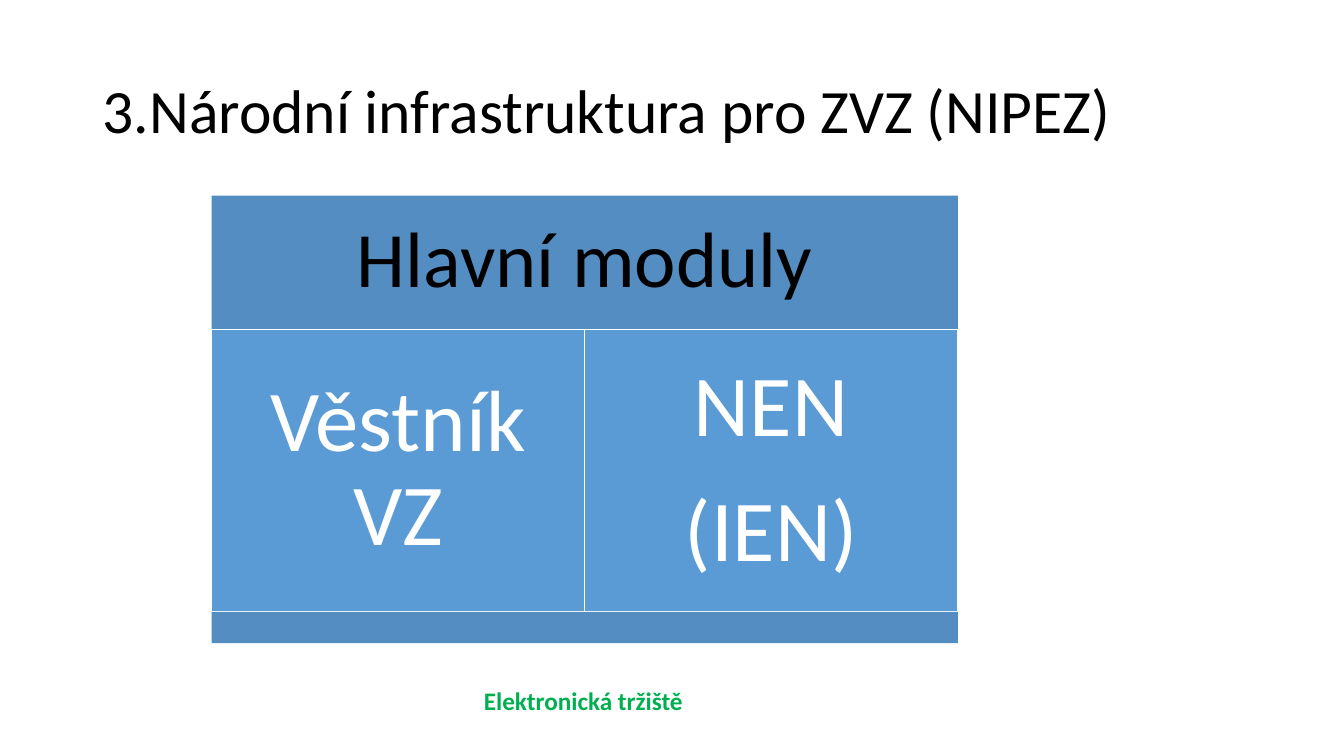
from pptx import Presentation
from pptx.dml.color import RGBColor
from pptx.enum.shapes import MSO_SHAPE
from pptx.enum.text import MSO_ANCHOR, MSO_AUTO_SIZE, PP_ALIGN
from pptx.util import Inches, Pt

COLORS = {
    "band": "538DC1",
    "module": "5B9BD5",
    "white": "FFFFFF",
    "black": "000000",
    "green": "00B050",
}
FONT = "Calibri"
LEFT, WIDTH = 2.1, 7.4
HEADER_TOP, HEADER_HEIGHT = 1.94, 1.33
MODULE_HEIGHT, FOOTER_HEIGHT = 2.8, 0.31
MODULES = ["Věstník VZ", "NEN\n(IEN)"]


def rgb(name):
    return RGBColor.from_string(COLORS[name])


def write(tf, text, size, color, bold=False, align=PP_ALIGN.LEFT,
          line_spacing=1.0, space_after=0):
    tf.text = text
    for p in tf.paragraphs:
        p.alignment = align
        p.line_spacing = line_spacing
        p.space_after = Pt(space_after)
        for r in p.runs:
            r.font.name = FONT
            r.font.size = Pt(size)
            r.font.bold = bold
            r.font.color.rgb = rgb(color)


def add_box(slide, left, top, width, height, fill, line=None):
    sp = slide.shapes.add_shape(MSO_SHAPE.RECTANGLE, Inches(left), Inches(top),
                                Inches(width), Inches(height))
    sp.shadow.inherit = False
    sp.fill.solid()
    sp.fill.fore_color.rgb = rgb(fill)
    if line:
        sp.line.color.rgb = rgb(line)
        sp.line.width = Pt(1)
    else:
        sp.line.fill.background()
    return sp


def label_box(sp, text, size, color, inset):
    tf = sp.text_frame
    tf.word_wrap = True
    tf.vertical_anchor = MSO_ANCHOR.MIDDLE
    tf.margin_left = tf.margin_right = Inches(inset)
    tf.margin_top = tf.margin_bottom = Inches(inset)
    write(tf, text, size, color, align=PP_ALIGN.CENTER,
          line_spacing=0.9, space_after=round(size * 0.35))


def add_title(slide, text):
    box = slide.shapes.add_textbox(Inches(0.92), Inches(0.4), Inches(11.5), Inches(1.45))
    tf = box.text_frame
    tf.word_wrap = True
    tf.vertical_anchor = MSO_ANCHOR.MIDDLE
    write(tf, text, 44, "black", line_spacing=0.9)


def add_caption(slide, text):
    box = slide.shapes.add_textbox(Inches(4.7), Inches(6.75), Inches(2.19), Inches(0.4))
    tf = box.text_frame
    tf.word_wrap = False
    tf.auto_size = MSO_AUTO_SIZE.SHAPE_TO_FIT_TEXT
    write(tf, text, 18, "green", bold=True)


def add_module_table(slide):
    """Header band, equal module boxes side by side, and a footer band."""
    header = add_box(slide, LEFT, HEADER_TOP, WIDTH, HEADER_HEIGHT, "band")
    label_box(header, "Hlavní moduly", 56, "black", 0.23)
    top = HEADER_TOP + HEADER_HEIGHT
    width = WIDTH / len(MODULES)
    for i, text in enumerate(MODULES):
        module = add_box(slide, LEFT + i * width, top, width, MODULE_HEIGHT,
                         "module", "white")
        label_box(module, text, 62, "white", 0.26)
    add_box(slide, LEFT, top + MODULE_HEIGHT, WIDTH, FOOTER_HEIGHT, "band")


def main():
    prs = Presentation()
    prs.slide_width, prs.slide_height = Inches(13.33), Inches(7.5)
    slide = prs.slides.add_slide(prs.slide_layouts[6])
    add_title(slide, "3.Národní infrastruktura pro ZVZ (NIPEZ)")
    add_module_table(slide)
    add_caption(slide, "Elektronická tržiště")
    prs.save("out.pptx")


if __name__ == "__main__":
    main()
